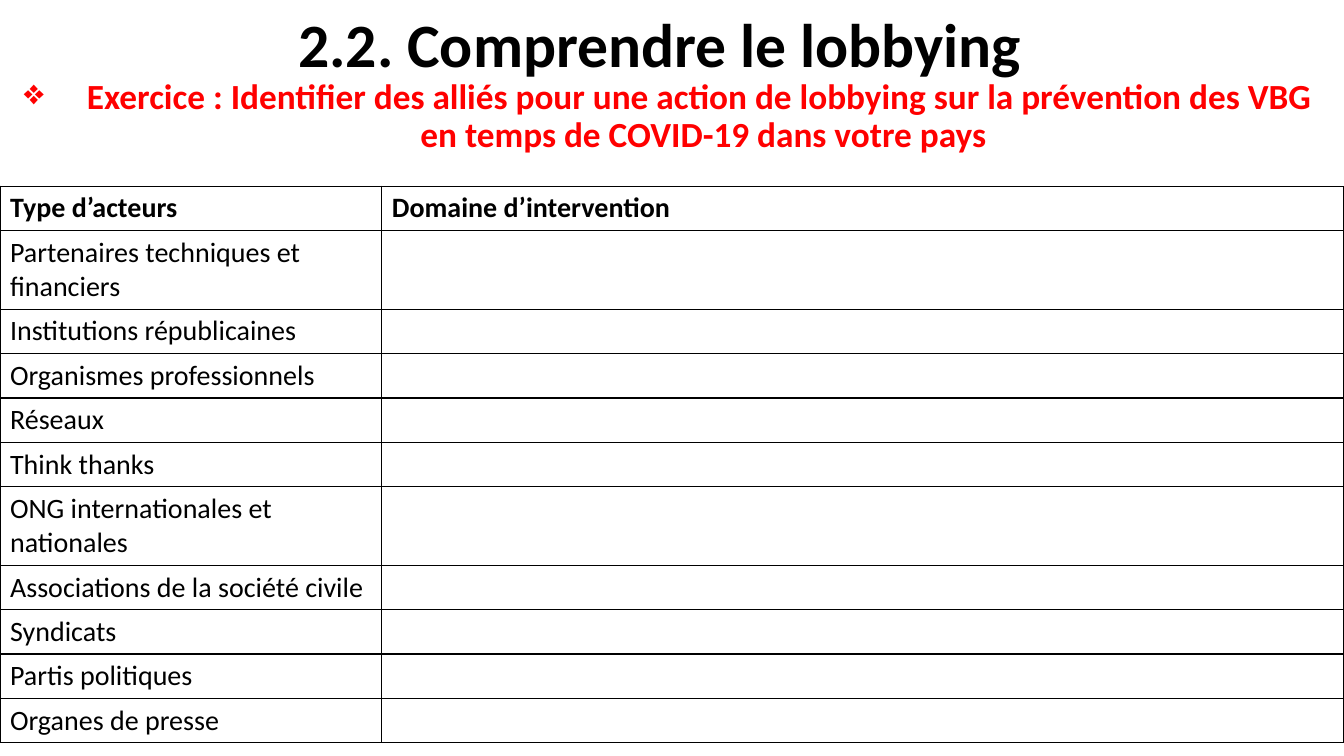
"""Build the lobbying exercise slide with its table of actors."""
from lxml import etree
from pptx import Presentation
from pptx import util as u
from pptx.dml.color import RGBColor
from pptx.enum import text
from pptx.oxml.ns import qn

TITLE = "2.2. Comprendre le lobbying"
EXERCISE = ["Exercice : Identifier des alliés pour une action de lobbying sur la prévention des VBG ",
            "en temps de COVID-19 dans votre pays"]
HEADER = ["Type d’acteurs", "Domaine d’intervention"]
ACTORS = ["Partenaires techniques et financiers", "Institutions républicaines",
          "Organismes professionnels", "Réseaux", "Think thanks",
          "ONG internationales et nationales", "Associations de la société civile",
          "Syndicats", "Partis politiques", "Organes de presse"]
TWO_LINE_ACTORS = {ACTORS[0], ACTORS[5]}

WIDTH, HEIGHT = 960, 540
COLUMNS = [272.8, 687.2]
TABLE_TOP = 133
ONE_LINE, TWO_LINES = 31.7, 56.2
HANGING = 45
TITLE_FONT = {"name": "Calibri", "size": u.Pt(44), "bold": True}
EXERCISE_FONT = {"name": "Calibri", "size": u.Pt(25.2), "bold": True}
HEADER_FONT = {"name": "Calibri", "size": u.Pt(20), "bold": True}
ACTOR_FONT = {**HEADER_FONT, "bold": False}


def paint(color, value):
    color.rgb = RGBColor.from_string(value)


def add_run(p, words, font, color="000000"):
    r = p.add_run()
    r.text = words
    for name, value in font.items():
        setattr(r.font, name, value)
    paint(r.font.color, color)


def add_heading(s, box, lines, font, color, bullet=None):
    tf = s.shapes.add_textbox(*map(u.Pt, box)).text_frame
    tf.word_wrap = True
    tf.vertical_anchor = text.MSO_ANCHOR.MIDDLE
    p = tf.paragraphs[0]
    p.alignment = text.PP_ALIGN.CENTER
    p.line_spacing = 0.9
    pPr = p._p.get_or_add_pPr()
    pPr.set("marL", str(u.Pt(HANGING)))
    pPr.set("indent", str(-u.Pt(HANGING)))
    if bullet:
        etree.SubElement(pPr, qn("a:buChar"), char=bullet)
    for i, line in enumerate(lines):
        if i:
            p.add_line_break()
        add_run(p, line, font, color)


def add_borders(cell):
    tcPr = cell._tc.get_or_add_tcPr()
    for i, side in enumerate(("lnL", "lnR", "lnT", "lnB")):
        ln = etree.Element(qn(f"a:{side}"), w=str(u.Pt(1)))
        fill = etree.SubElement(ln, qn("a:solidFill"))
        etree.SubElement(fill, qn("a:srgbClr"), val="000000")
        tcPr.insert(i, ln)


def add_actor_table(s):
    rows = [HEADER] + [[actor, ""] for actor in ACTORS]
    heights = [TWO_LINES if row[0] in TWO_LINE_ACTORS else ONE_LINE for row in rows]
    box = (0, TABLE_TOP, WIDTH, sum(heights))
    table = s.shapes.add_table(len(rows), len(COLUMNS), *map(u.Pt, box)).table
    for column, width in zip(table.columns, COLUMNS):
        column.width = u.Pt(width)
    for i, (row, height) in enumerate(zip(rows, heights)):
        table.rows[i].height = u.Pt(height)
        for j, words in enumerate(row):
            cell = table.cell(i, j)
            cell.fill.background()
            add_borders(cell)
            if words:
                add_run(cell.text_frame.paragraphs[0], words, ACTOR_FONT if i else HEADER_FONT)


def main():
    prs = Presentation()
    prs.slide_width, prs.slide_height = u.Pt(WIDTH), u.Pt(HEIGHT)
    s = prs.slides.add_slide(prs.slide_layouts[6])
    add_heading(s, (0, 51, WIDTH, 65.5), EXERCISE, EXERCISE_FONT, "FF0000", "❖")
    add_actor_table(s)
    add_heading(s, (57.6, 1.5, 828, 65), [TITLE], TITLE_FONT, "000000")
    prs.save("out.pptx")


if __name__ == "__main__":
    main()
